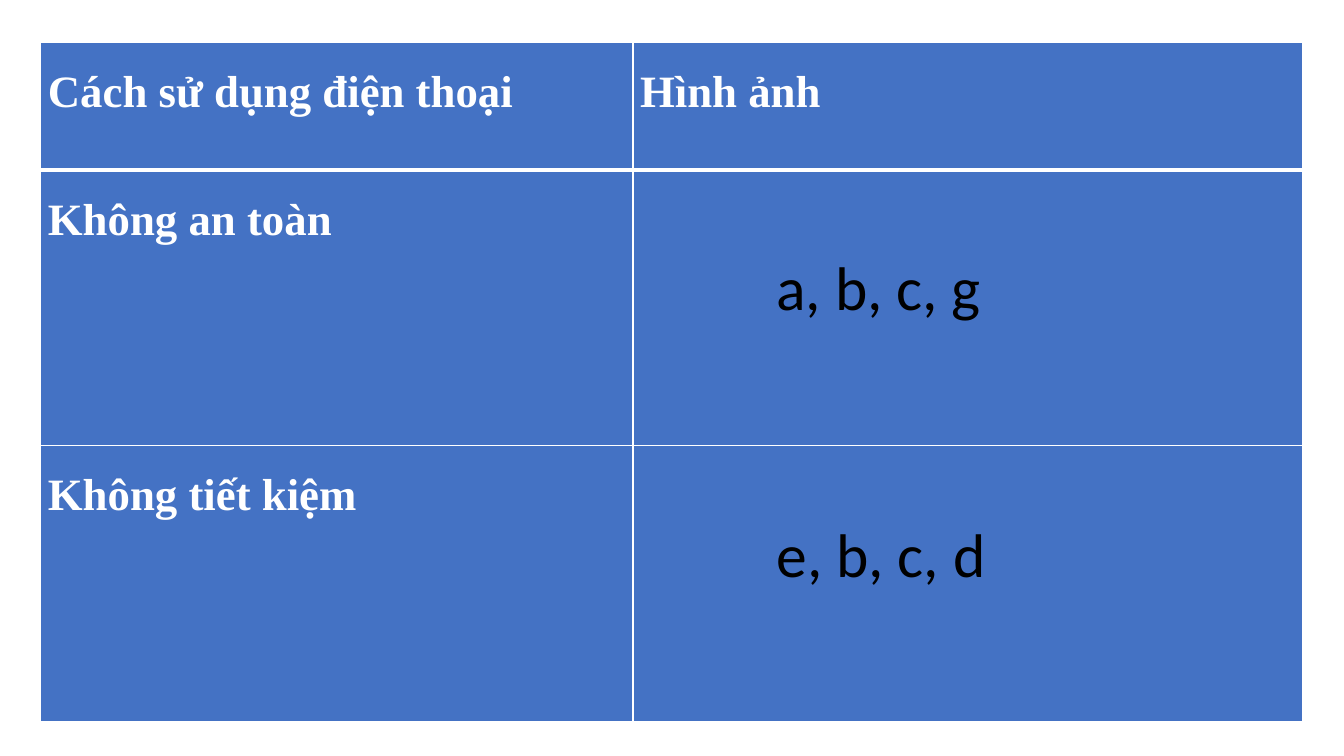
from dataclasses import dataclass

from lxml import etree
from pptx import Presentation
from pptx.dml.color import RGBColor
from pptx.enum.text import MSO_ANCHOR
from pptx.oxml.ns import qn
from pptx.util import Pt

MIDDLE = MSO_ANCHOR.MIDDLE


@dataclass(frozen=True)
class Theme:
    blue: str = "4472C4"
    white: str = "FFFFFF"
    black: str = "000000"
    serif: str = "Times New Roman"
    sans: str = "Calibri"
    label: int = 32
    answer: int = 44
    thin: int = 1
    thick: int = 3


class Board:
    def __init__(self, slide, theme):
        self.slide = slide
        self.theme = theme

    def label(self, para, text, color, space, **style):
        para.line_spacing = space
        run = para.add_run()
        run.text = text
        for key, value in style.items():
            setattr(run.font, key, value)
        run.font.color.rgb = RGBColor.from_string(color)

    def edge(self, cell, sides):
        """Draw cell borders; sides maps L, R, T, B, in that order, to widths."""
        props = cell._tc.get_or_add_tcPr()
        for spot, (side, width) in enumerate(sides.items()):
            line = etree.Element(qn(f"a:ln{side}"), w=str(Pt(width)))
            fill = etree.SubElement(line, qn("a:solidFill"))
            etree.SubElement(fill, qn("a:srgbClr"), val=self.theme.white)
            props.insert(spot, line)

    def grid(self, left, top, widths, heights, rows):
        theme = self.theme
        frame = self.slide.shapes.add_table(
            len(heights), len(widths), Pt(left), Pt(top),
            Pt(sum(widths)), Pt(sum(heights)))
        table = frame.table
        table.horz_banding = False
        for col, width in zip(table.columns, widths):
            col.width = Pt(width)
        for row, height in zip(table.rows, heights):
            row.height = Pt(height)
        inset = {"margin_left": Pt(5), "margin_right": Pt(5),
                 "margin_top": 0, "margin_bottom": 0}
        for r, texts in enumerate(rows):
            for c, text in enumerate(texts):
                cell = table.cell(r, c)
                cell.fill.solid()
                cell.fill.fore_color.rgb = RGBColor.from_string(theme.blue)
                self.edge(cell, {
                    "L": theme.thin, "R": theme.thin,
                    "T": theme.thick if r == 1 else theme.thin,
                    "B": theme.thick if r == 0 else theme.thin})
                if text:
                    for key, value in inset.items():
                        setattr(cell, key, value)
                    self.label(cell.text_frame.paragraphs[0], text, theme.white,
                               1.5, name=theme.serif, size=Pt(theme.label), bold=True)

    def answer(self, left, top, width, height, text):
        theme = self.theme
        box = self.slide.shapes.add_textbox(Pt(left), Pt(top), Pt(width), Pt(height))
        frame = box.text_frame
        frame.word_wrap = True
        frame.vertical_anchor = MIDDLE
        self.label(frame.paragraphs[0], text, theme.black, 0.9,
                   name=theme.sans, size=Pt(theme.answer))


def main():
    deck = Presentation()
    deck.slide_width, deck.slide_height = Pt(960), Pt(540)
    board = Board(deck.slides.add_slide(deck.slide_layouts[6]), Theme())
    board.grid(29.2, 30.4, (423, 478), (91.2, 196.8, 196.8), (
        ("Cách sử dụng điện thoại", "Hình ảnh"),
        ("Không an toàn", ""),
        ("Không tiết kiệm", "")))
    for top, text in ((358.6, "e, b, c, d"), (167.8, "a, b, c, g")):
        board.answer(547.5, top, 194.4, 79.2, text)
    deck.save("out.pptx")


if __name__ == "__main__":
    main()
